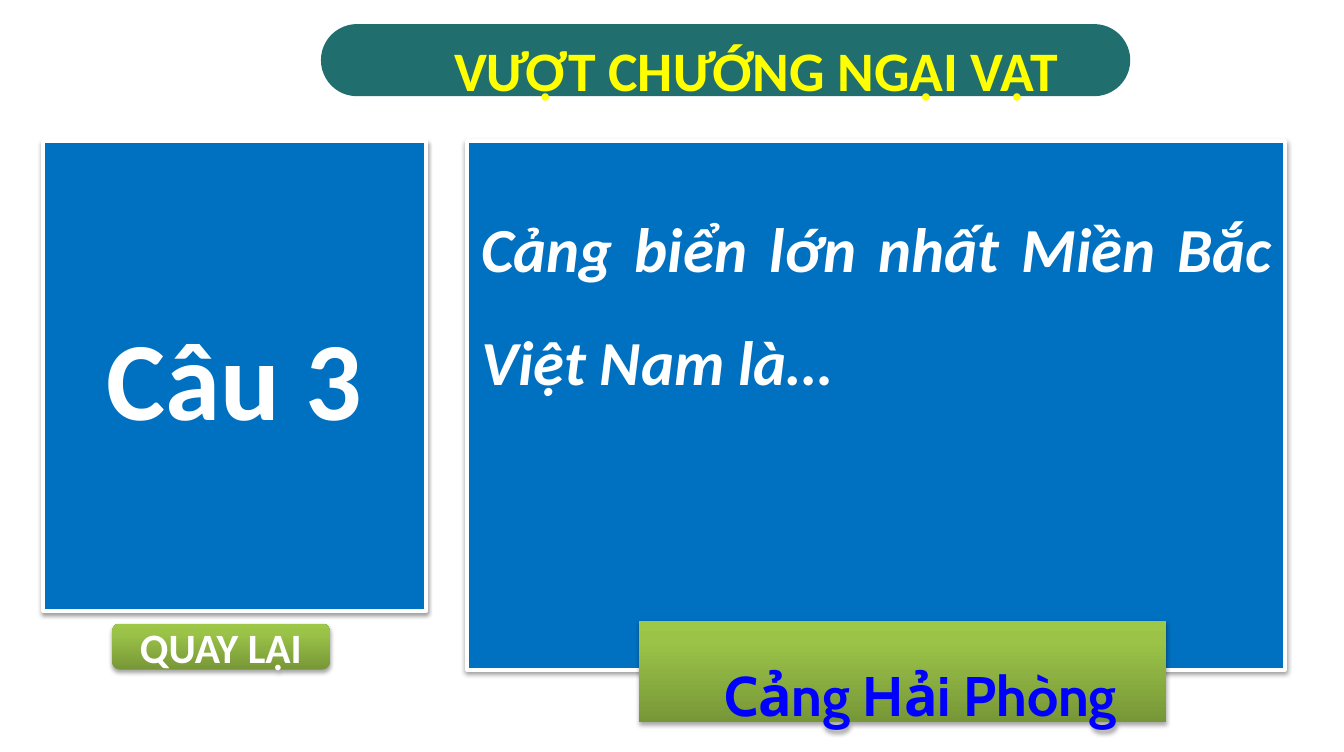
from copy import deepcopy
from dataclasses import dataclass
from typing import Optional

from lxml.etree import SubElement
from pptx import Presentation
from pptx.dml.color import RGBColor
from pptx.enum.shapes import MSO_SHAPE
from pptx.enum.text import MSO_ANCHOR, MSO_AUTO_SIZE, PP_ALIGN
from pptx.oxml.ns import qn
from pptx.shapes.autoshape import Shape
from pptx.util import Pt

WHITE = RGBColor(0xFF, 0xFF, 0xFF)
YELLOW = RGBColor(0xFF, 0xFF, 0x00)
ANSWER_BLUE = RGBColor(0x00, 0x00, 0xFF)
PANEL_BLUE = RGBColor(0x00, 0x70, 0xC0)
TEAL = RGBColor(0x20, 0x6E, 0x6E)
GREEN_STOPS = (
    (0, RGBColor(0x77, 0x97, 0x37)),
    (0.8, RGBColor(0x9B, 0xC3, 0x48)),
    (1, RGBColor(0x9D, 0xC7, 0x46)),
)


@dataclass
class Box:
    left: float
    top: float
    width: float
    height: float


@dataclass
class Label:
    text: str
    size: float
    color: RGBColor = WHITE
    font: str = "Calibri"
    italic: Optional[bool] = None
    align: PP_ALIGN = PP_ALIGN.CENTER
    anchor: MSO_ANCHOR = MSO_ANCHOR.MIDDLE
    line_spacing: float = 1
    margin_x: float = 9.4
    margin_y: float = 5
    indent: float = 0


@dataclass
class Panel:
    box: Box
    fill: Optional[RGBColor] = None  # None gives the green gradient
    geometry: MSO_SHAPE = MSO_SHAPE.RECTANGLE
    outlined: bool = False
    shadow_opacity: int = 0
    shadow_distance: float = 1.8
    label: Optional[Label] = None


def place(shape: Shape, box: Box) -> None:
    shape.left, shape.top = Pt(box.left), Pt(box.top)
    shape.width, shape.height = Pt(box.width), Pt(box.height)


def write_label(shape: Shape, label: Label) -> None:
    frame = shape.text_frame
    frame.text = label.text
    frame.word_wrap = True
    frame.auto_size = MSO_AUTO_SIZE.NONE
    frame.vertical_anchor = label.anchor
    frame.margin_left = Pt(label.margin_x + label.indent)
    frame.margin_right = Pt(label.margin_x)
    frame.margin_top = frame.margin_bottom = Pt(label.margin_y)
    paragraph = frame.paragraphs[0]
    paragraph.alignment = label.align
    paragraph.line_spacing = label.line_spacing
    font = paragraph.font
    font.name, font.size = label.font, Pt(label.size)
    font.bold, font.italic = True, label.italic
    font.color.rgb = label.color


def fill_green(shape: Shape) -> None:
    """Apply the three-stop gradient, dark at the bottom."""
    fill = shape.fill
    fill.gradient()
    fill.gradient_angle = 90
    stop_list = shape._element.spPr.find(f".//{qn('a:gsLst')}")
    stop_list.append(deepcopy(stop_list[-1]))
    for stop, (position, color) in zip(fill.gradient_stops, GREEN_STOPS):
        stop.position = position
        stop.color.rgb = color


def cast_shadow(shape: Shape, opacity: int, distance: float) -> None:
    effects = shape._element.spPr.find(qn("a:effectLst"))
    shadow = SubElement(effects, qn("a:outerShdw"), blurRad=str(Pt(3.1)),
                        dist=str(Pt(distance)), dir="5400000", rotWithShape="0")
    color = SubElement(shadow, qn("a:srgbClr"), val="000000")
    SubElement(color, qn("a:alpha"), val=str(opacity * 1000))


def add_panel(slide, panel: Panel) -> Shape:
    shape = slide.shapes.add_shape(panel.geometry, 0, 0, 0, 0)
    place(shape, panel.box)
    if panel.fill is None:
        fill_green(shape)
    else:
        shape.fill.solid()
        shape.fill.fore_color.rgb = panel.fill
    if panel.outlined:
        shape.line.color.rgb = WHITE
        shape.line.width = Pt(3)
    else:
        shape.line.fill.background()
    shape.shadow.inherit = False
    if panel.shadow_opacity:
        cast_shadow(shape, panel.shadow_opacity, panel.shadow_distance)
    if panel.label:
        write_label(shape, panel.label)
    return shape


BACK_BUTTON = Panel(Box(80.6, 447.8, 156.2, 33.1), geometry=MSO_SHAPE.ROUNDED_RECTANGLE,
                    shadow_opacity=35, label=Label("QUAY LẠI", 30))
NUMBER_PANEL = Panel(Box(31, 101.5, 275, 337), PANEL_BLUE, outlined=True,
                     shadow_opacity=38, shadow_distance=1.6, label=Label("Câu 3", 80))
QUESTION_PANEL = Panel(Box(335.5, 101.5, 586.8, 379.4), PANEL_BLUE, outlined=True,
                       shadow_opacity=38, shadow_distance=1.6)
TITLE_BAR = Panel(Box(230.4, 17.3, 581, 51.8), TEAL, MSO_SHAPE.ROUNDED_RECTANGLE)
ANSWER_PANEL = Panel(
    Box(458.6, 445.7, 378.7, 72.7), shadow_opacity=35,
    label=Label("Cảng Hải Phòng", 40, ANSWER_BLUE, "Cabin", anchor=MSO_ANCHOR.TOP,
                line_spacing=1.5, indent=26))
TITLE = Label("VƯỢT CHƯỚNG NGẠI VẬT", 40, YELLOW, anchor=MSO_ANCHOR.TOP,
              line_spacing=1.5, margin_x=7.2, margin_y=3.6, indent=48)
QUESTION = Label("Cảng biển lớn nhất Miền Bắc Việt Nam là…", 45, italic=True,
                 align=PP_ALIGN.JUSTIFY, anchor=MSO_ANCHOR.TOP, line_spacing=1.5,
                 margin_x=7.2, margin_y=3.6)


def main() -> None:
    presentation = Presentation()
    presentation.slide_width, presentation.slide_height = Pt(964.8), Pt(540)
    slide = presentation.slides.add_slide(presentation.slide_layouts[5])

    for panel in (BACK_BUTTON, NUMBER_PANEL, QUESTION_PANEL):
        add_panel(slide, panel)

    title_bar = add_panel(slide, TITLE_BAR)
    title_bar.adjustments[0] = 0.5
    title = slide.shapes.title
    place(title, Box(242.6, -2.2, 552.2, 79.9))
    write_label(title, TITLE)
    title_bar._element.addnext(title._element)

    add_panel(slide, ANSWER_PANEL)
    question = slide.shapes.add_textbox(0, 0, 0, 0)
    place(question, Box(338.4, 120.2, 581.8, 162.7))
    write_label(question, QUESTION)

    presentation.save("out.pptx")


if __name__ == "__main__":
    main()
